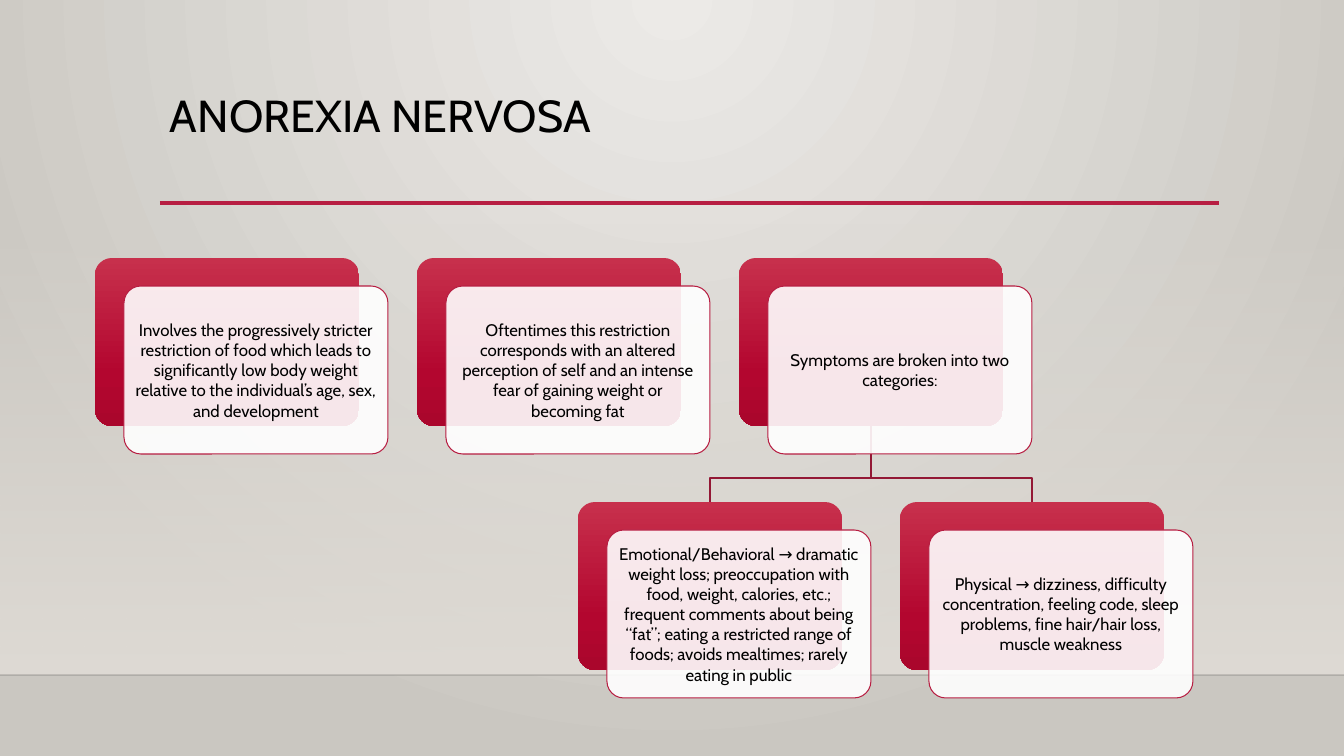
from lxml import etree
from pptx import Presentation
from pptx.dml.color import RGBColor
from pptx.enum.shapes import MSO_CONNECTOR, MSO_SHAPE
from pptx.enum.text import MSO_ANCHOR, PP_ALIGN
from pptx.oxml import parse_xml
from pptx.oxml.ns import nsdecls, qn
from pptx.util import Pt

STRAIGHT = MSO_CONNECTOR.STRAIGHT
RECT, ROUNDED = MSO_SHAPE.RECTANGLE, MSO_SHAPE.ROUNDED_RECTANGLE
TOP, MIDDLE = MSO_ANCHOR.TOP, MSO_ANCHOR.MIDDLE
CENTER = PP_ALIGN.CENTER

FONT = "Cabin"
SLIDE_W, SLIDE_H = 1344, 756
SCALE = 12192000 / SLIDE_W
COLORS = {
    "text": "000000", "card": "FFFFFF", "accent": "B71E42", "branch": "931835",
    "back_top": "C7304C", "back_mid": "B3062F", "back_end": "AA062C",
    "wall_light": "ECEAE7", "wall_dark": "CAC7C1", "wall_low": "DFDBD5", "floor_edge": "000001",
}
DOWN = '<a:lin ang="5400000" scaled="0"/>'
SPOTLIGHT = ('<a:path path="circle">'
             '<a:fillToRect l="43000" t="0" r="43000" b="100000"/></a:path>')

CARD_W, CARD_H = 264, 168
SHIFT_X, SHIFT_Y = 29, 28
PITCH_X, PITCH_Y = 322, 244
TOP_CARDS = [
    "Involves the progressively stricter restriction of food which leads to significantly "
    "low body weight relative to the individual’s age, sex, and development",
    "Oftentimes this restriction corresponds with an altered perception of self and an "
    "intense fear of gaining weight or becoming fat",
    "Symptoms are broken into two categories:",
]
SYMPTOM_CARDS = [
    "Emotional/Behavioral → dramatic weight loss; preoccupation with food, weight, calories, "
    "etc.; frequent comments about being “fat”; eating a restricted range of foods; avoids "
    "mealtimes; rarely eating in public",
    "Physical → dizziness, difficulty concentration, feeling code, sleep problems, "
    "fine hair/hair loss, muscle weakness",
]


def px(n):
    return round(n * SCALE)


def rgb(name):
    return RGBColor.from_string(COLORS[name])


def set_alpha(element, percent):
    color = element.find(".//" + qn("a:srgbClr"))
    etree.SubElement(color, qn("a:alpha")).set("val", str(percent * 1000))


def set_gradient(owner, fill, stops, direction):
    """Stops are (position %, colour name, opacity %)."""
    fill.gradient()
    old = owner.find(".//" + qn("a:gradFill"))
    gs = "".join(
        f'<a:gs pos="{pos * 1000}"><a:srgbClr val="{COLORS[name]}">'
        f'<a:alpha val="{alpha * 1000}"/></a:srgbClr></a:gs>'
        for pos, name, alpha in stops)
    new = parse_xml(f'<a:gradFill {nsdecls("a")} rotWithShape="1">'
                    f'<a:gsLst>{gs}</a:gsLst>{direction}</a:gradFill>')
    old.getparent().replace(old, new)


def add_box(slide, kind, x, y, w, h):
    sp = slide.shapes.add_shape(kind, px(x), px(y), px(w), px(h))
    sp.shadow.inherit = False
    sp.line.fill.background()
    return sp


def add_rule(slide, x1, x2, y, color, width):
    line = slide.shapes.add_connector(STRAIGHT, px(x1), px(y), px(x2), px(y))
    line.line.color.rgb = rgb(color)
    line.line.width = Pt(width)
    etree.SubElement(line.element.spPr, qn("a:effectLst"))
    return line


def set_text(sp, text, size, anchor):
    tf = sp.text_frame
    tf.word_wrap = True
    tf.vertical_anchor = anchor
    p = tf.paragraphs[0]
    p.text = text
    p.font.name, p.font.size = FONT, Pt(size)
    p.font.color.rgb = rgb("text")
    return p


def add_backdrop(slide, floor_y):
    set_gradient(slide.element, slide.background.fill,
                 [(0, "wall_light", 100), (100, "wall_dark", 100)], SPOTLIGHT)
    wall_y = 223
    wall = add_box(slide, RECT, 0, wall_y, SLIDE_W, floor_y - wall_y)
    set_gradient(wall.element, wall.fill,
                 [(0, "wall_low", 0), (100, "wall_low", 100)], DOWN)
    edge = add_rule(slide, 0, SLIDE_W, floor_y, "floor_edge", 1)
    set_alpha(edge.element.spPr, 20)


def add_title(slide, x, y, w, h):
    add_rule(slide, x, x + w, y + h - 1, "accent", 2.5)
    sp = slide.shapes.add_textbox(px(x), px(y), px(w), px(h))
    p = set_text(sp, "ANOREXIA NERVOSA", 32, TOP)
    p.line_spacing = 0.9


def add_branch(slide, x1, y1, x2, y2):
    bend_y = y2 - 24
    fb = slide.shapes.build_freeform(px(x1), px(y1))
    fb.add_line_segments([(px(x1), px(bend_y)), (px(x2), px(bend_y)), (px(x2), px(y2))],
                         close=False)
    sp = fb.convert_to_shape()
    sp.shadow.inherit = False
    sp.fill.background()
    sp.line.color.rgb = rgb("branch")
    sp.line.width = Pt(0.75)


def add_card(slide, x, y, text):
    # Red plate behind
    back = add_box(slide, ROUNDED, x, y, CARD_W, CARD_H)
    set_gradient(back.element, back.fill,
                 [(0, "back_top", 100), (69, "back_mid", 100), (100, "back_end", 100)], DOWN)
    # Translucent white card in front
    front = add_box(slide, ROUNDED, x + SHIFT_X, y + SHIFT_Y, CARD_W, CARD_H)
    front.fill.solid()
    front.fill.fore_color.rgb = rgb("card")
    set_alpha(front.element.spPr, 90)
    front.line.color.rgb = rgb("accent")
    front.line.width = Pt(0.75)
    back.adjustments[0] = front.adjustments[0] = 0.1
    tf = front.text_frame
    tf.margin_left = tf.margin_right = tf.margin_top = tf.margin_bottom = px(5)
    set_text(front, text, 12, MIDDLE).alignment = CENTER


def add_hierarchy(slide, x, y):
    top_row = [(x + i * PITCH_X, y) for i in range(len(TOP_CARDS))]
    parent_x = top_row[-1][0]
    # Children are centred under the last card
    first_x = parent_x - PITCH_X * (len(SYMPTOM_CARDS) - 1) // 2
    child_row = [(first_x + i * PITCH_X, y + PITCH_Y) for i in range(len(SYMPTOM_CARDS))]
    for child_x, child_y in reversed(child_row):
        add_branch(slide, parent_x + CARD_W // 2, y + CARD_H, child_x + CARD_W // 2, child_y)
    for (card_x, card_y), text in zip(top_row + child_row, TOP_CARDS + SYMPTOM_CARDS):
        add_card(slide, card_x, card_y, text)


def main():
    prs = Presentation()
    prs.slide_width, prs.slide_height = px(SLIDE_W), px(SLIDE_H)
    slide = prs.slides.add_slide(prs.slide_layouts[6])
    add_backdrop(slide, 675)
    add_title(slide, 160, 89, 1059, 115)
    add_hierarchy(slide, 95, 258)
    prs.save("out.pptx")


if __name__ == "__main__":
    main()
